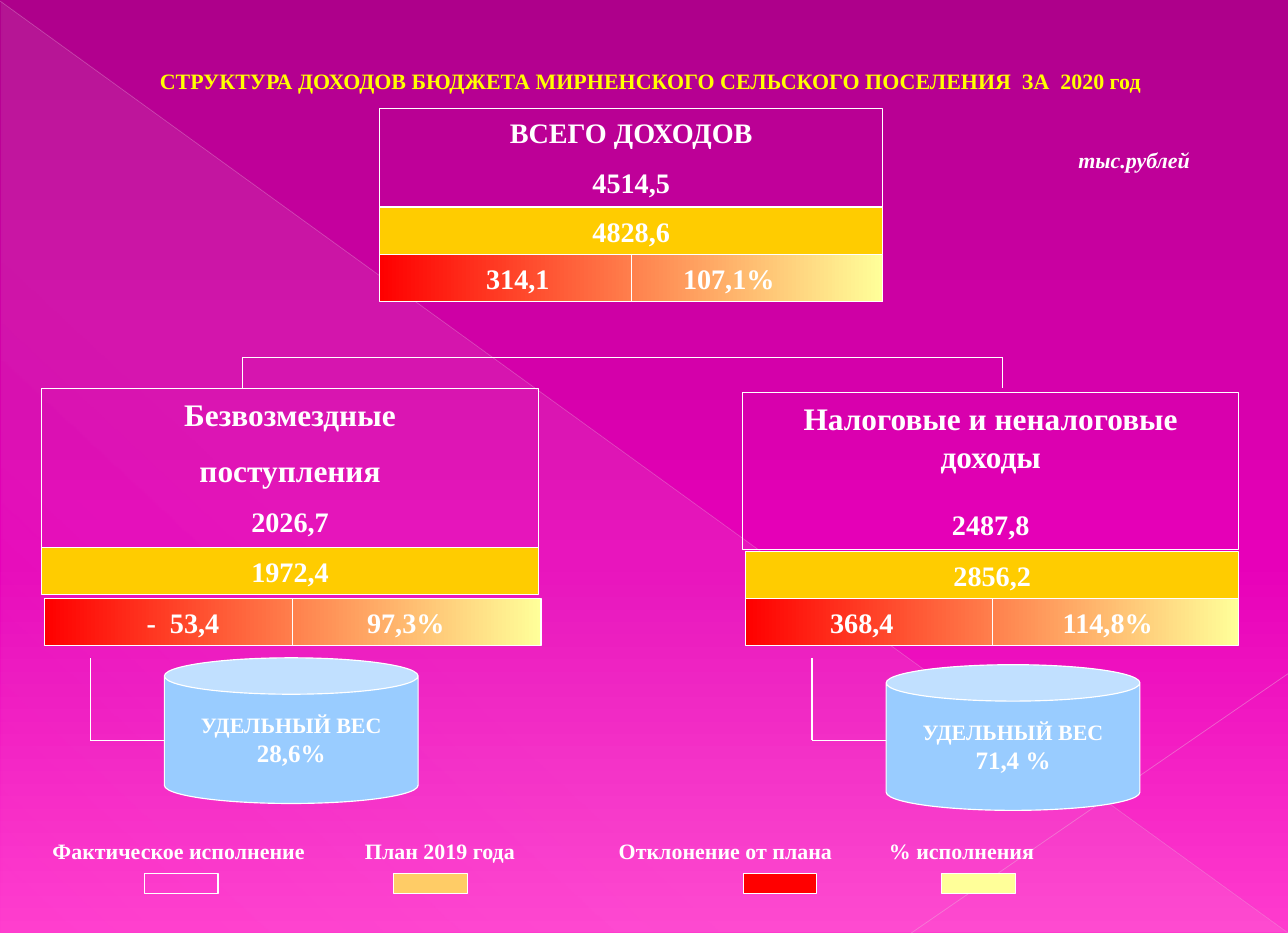
from dataclasses import dataclass

from lxml import etree
from pptx import Presentation
from pptx import dml
from pptx.dml import color
from pptx.enum import shapes, text
from pptx.oxml import ns
from pptx.util import Pt


@dataclass(frozen=True)
class Theme:
    font: str = "Times New Roman"
    back: tuple = ((0, "AE008B"), (60, "E700B9"), (100, "FF3BCE"))
    veil: tuple = ((0, "F4E7ED", 10), (70, "F4E7ED", 8), (100, "F4E7ED", 1))
    heat: tuple = ((0, "FF0000"), (100, "FFFF99"))
    white: str = "FFFFFF"
    title: str = "FFFF00"
    plan: str = "FFCC00"
    key: str = "FFCC66"
    diff: str = "FF0000"
    rate: str = "FFFF99"
    can: str = "99CCFF"
    ray: str = "EBB2DB"
    small: int = 14
    mid: int = 16
    large: int = 18
    head: int = 20


T = Theme()
BOX = shapes.MSO_SHAPE.RECTANGLE
MID = text.PP_ALIGN.CENTER
LEFT = text.PP_ALIGN.LEFT
ROW = 30


def rgb(code):
    return color.RGBColor.from_string(code)


def child(node, tag, **attrs):
    return etree.SubElement(node, ns.qn(tag), **attrs)


def fade(owner, fill, stops, angle):
    """Fill with (percent, colour[, opacity]) stops, clockwise angle."""
    fill.gradient()
    grad = next(owner.element.iter(ns.qn("a:gradFill")))
    for old in list(grad):
        grad.remove(old)
    stop_list = child(grad, "a:gsLst")
    for spot, code, *alpha in stops:
        stop = child(stop_list, "a:gs", pos=str(spot * 1000))
        tint = child(stop, "a:srgbClr", val=code)
        for part in alpha:
            child(tint, "a:alpha", val=str(part * 1000))
    child(grad, "a:lin", ang=str(angle * 60000), scaled="0")


def write(shape, lines, align=MID, hue=T.white, slant=False, wrap=True,
          anchor=text.MSO_ANCHOR.TOP):
    """Write (text, size, space before) lines into a shape."""
    frame = shape.text_frame
    frame.auto_size = text.MSO_AUTO_SIZE.NONE
    frame.word_wrap = wrap
    frame.vertical_anchor = anchor
    frame.margin_left = frame.margin_right = Pt(8)
    frame.margin_top = frame.margin_bottom = Pt(4.3)
    frame.text = "\n".join(words for words, _, _ in lines)
    for para, (_, size, gap) in zip(frame.paragraphs, lines):
        para.alignment = align
        para.space_before = Pt(gap)
        font = para.font
        font.name, font.size, font.bold = T.font, Pt(size), True
        font.italic = slant
        font.color.rgb = rgb(hue)


def label(slide, words, size, x, y, w, h, **style):
    area = slide.shapes.add_textbox(Pt(x), Pt(y), Pt(w), Pt(h))
    write(area, [(words, size, 0)], **style)


def form(slide, x, y, w, h, fill=None, kind=BOX):
    shape = slide.shapes.add_shape(kind, Pt(x), Pt(y), Pt(w), Pt(h))
    shape.shadow.inherit = False
    if fill:
        shape.fill.solid()
        shape.fill.fore_color.rgb = rgb(fill)
    else:
        shape.fill.background()
    shape.line.color.rgb = rgb(T.white)
    shape.line.width = Pt(0.75)
    return shape


def rule(slide, x1, y1, x2, y2, hue=T.white, width=0.75, alpha=100):
    line = slide.shapes.add_connector(
        shapes.MSO_CONNECTOR.STRAIGHT, Pt(x1), Pt(y1), Pt(x2), Pt(y2))
    line.line.color.rgb = rgb(hue)
    line.line.width = Pt(width)
    if alpha < 100:
        tint = next(line.element.spPr.iter(ns.qn("a:srgbClr")))
        child(tint, "a:alpha", val=str(alpha * 1000))
    child(line.element.spPr, "a:effectLst")
    return line


def chain(slide, *points):
    for start, end in zip(points, points[1:]):
        rule(slide, *start, *end)


def fact(slide, x, y, w, h, lines):
    write(form(slide, x, y, w, h), lines)


def plan(slide, x, y, w, words):
    write(form(slide, x, y, w, ROW, T.plan), [(words, T.large, 0)])


def split(slide, x, y, w, cells):
    """Graded bar in two halves; cells hold (text, centre x)."""
    bar = form(slide, x, y, w, ROW)
    fade(bar, bar.fill, T.heat, 0)
    half = rule(slide, x + w / 2, y, x + w / 2, y + ROW)
    half.begin_connect(bar, 0)
    half.end_connect(bar, 2)
    for words, centre in cells:
        label(slide, words, T.large, centre - 50, y, 100, ROW)


def share(slide, x, y, words):
    """Cylinder with its share, hung on an elbow line."""
    chain(slide, (x - 47.3, 420), (x - 47.3, 472.5), (x, 472.5))
    can = form(slide, x, y, 162, 93, T.can, shapes.MSO_SHAPE.CAN)
    write(can, [("УДЕЛЬНЫЙ ВЕС", T.small, 0), (words, T.mid, 0)],
          wrap=False, anchor=text.MSO_ANCHOR.MIDDLE)


def decor(slide, wide, high):
    fade(slide, slide.background.fill, T.back, 90)
    veil = form(slide, 0.7, 1.4, 821, 593.3,
                kind=shapes.MSO_SHAPE.RIGHT_TRIANGLE)
    fade(veil, veil.fill, T.veil, 133)
    veil.line.fill.background()
    rule(slide, 0, 0.7, wide, high, T.ray, 0.39, 35)
    rule(slide, wide, 430, 581.8, high, T.ray, 0.47, 45)


def title(slide, words):
    head = slide.shapes.title
    head.left, head.top = Pt(44.6), Pt(38.9)
    head.width, head.height = Pt(741.6), Pt(25.2)
    write(head, [(words, T.small, 0)], hue=T.title)


def legend(slide):
    for words, x, swatch, fill in (
            ("Фактическое исполнение", 33.5, 92.2, None),
            ("План 2019 года", 233, 251.3, T.key),
            ("Отклонение от плана", 395, 474.5, T.diff),
            ("% исполнения", 567.5, 601.2, T.rate)):
        label(slide, words, T.small, x - 8, 530, 185, 25, align=LEFT)
        form(slide, swatch, 557.3, 47, 13, fill)


def main():
    deck = Presentation()
    wide, high = 822.24, 595.44
    deck.slide_width, deck.slide_height = Pt(wide), Pt(high)
    slide = deck.slides.add_slide(deck.slide_layouts[5])
    decor(slide, wide, high)
    title(slide, "СТРУКТУРА ДОХОДОВ БЮДЖЕТА МИРНЕНСКОГО СЕЛЬСКОГО "
                 "ПОСЕЛЕНИЯ  ЗА  2020 год")
    label(slide, "тыс.рублей", T.small, 680.4, 89.3, 106, 25,
          align=LEFT, slant=True)

    fact(slide, 242.5, 69.3, 321, 62.8,
         [("ВСЕГО ДОХОДОВ", T.large, 0), ("4514,5", T.large, 10)])
    plan(slide, 242.5, 132.4, 321, "4828,6")
    split(slide, 242.5, 162.7, 321, [("314,1", 330.6), ("107,1%", 465.3)])

    chain(slide, (154.8, 247.7), (154.8, 228.2),
          (640.1, 228.2), (640.1, 247.7))

    fact(slide, 26.8, 247.9, 316.8, 101.5,
         [("Безвозмездные", T.head, 0), ("поступления", T.head, 11.5),
          ("2026,7", T.large, 10.4)])
    plan(slide, 26.8, 349.3, 316.8, "1972,4")
    split(slide, 28.6, 382.2, 316.8, [("-  53,4", 116.8), ("97,3%", 259.1)])
    share(slide, 104.9, 419.8, "28,6%")

    fact(slide, 474.1, 250.6, 316.8, 100.1,
         [("Налоговые и неналоговые доходы", T.head, 0),
          ("2487,8", T.large, 20.8)])
    plan(slide, 475.9, 352, 315, "2856,2")
    split(slide, 475.9, 382, 315, [("368,4", 550.2), ("114,8%", 707.2)])
    share(slide, 565.7, 424.2, "71,4 %")

    legend(slide)
    deck.save("out.pptx")


if __name__ == "__main__":
    main()
